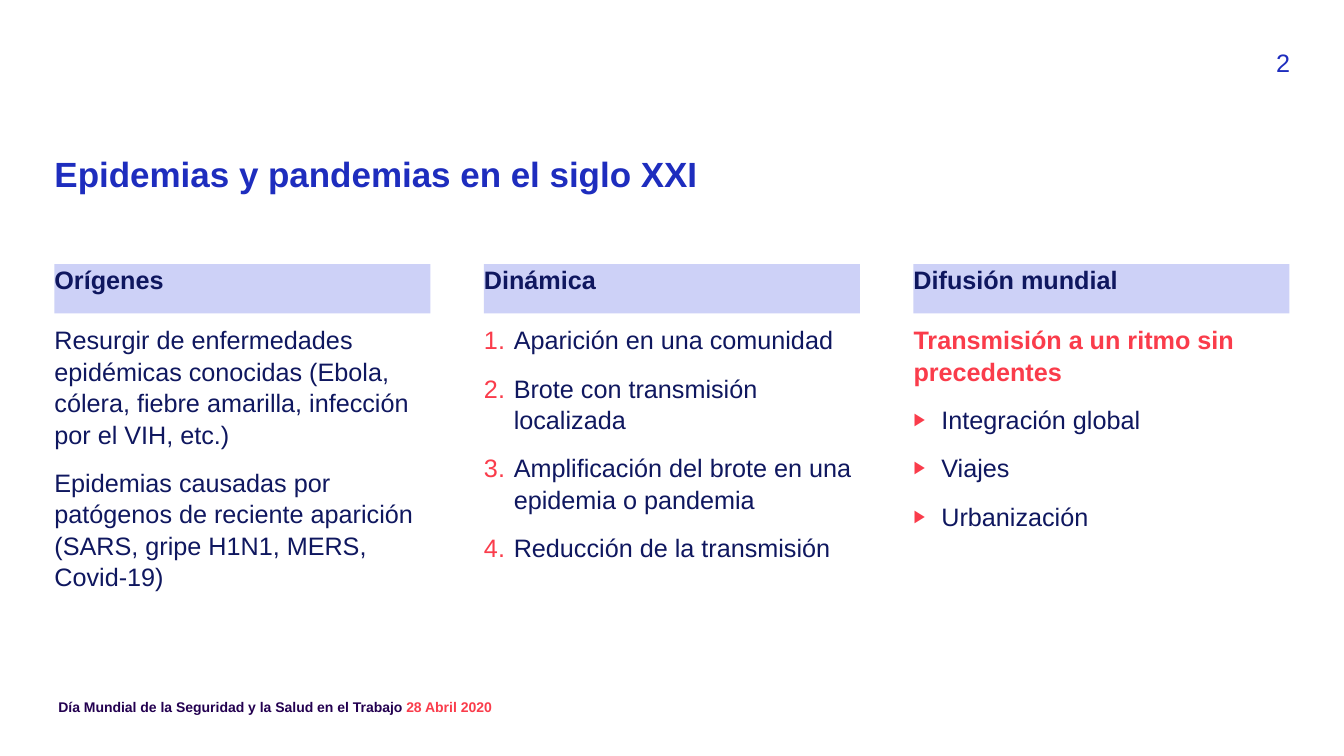
from dataclasses import dataclass
from typing import Optional

from lxml.etree import SubElement
from pptx import Presentation
from pptx.dml.color import RGBColor
from pptx.enum.shapes import MSO_SHAPE as Preset
from pptx.enum.text import MSO_ANCHOR as Anchor, MSO_AUTO_SIZE as AutoSize, PP_ALIGN as Align
from pptx.oxml.ns import qn
from pptx.util import Pt

FONT = "Arial"
BLUE = RGBColor(0x1E, 0x2D, 0xBE)
NAVY = RGBColor(0x0F, 0x17, 0x5F)
RED = RGBColor(0xFA, 0x3C, 0x4B)
LAVENDER = RGBColor(0xCD, 0xD1, 0xF7)
VIOLET = RGBColor(0x23, 0x00, 0x50)

LEFT, COLUMN_WIDTH, COLUMN_PITCH = 38.9, 268.6, 306.8
HEADER_TOP, HEADER_HEIGHT = 188.6, 35.3
BODY_TOP, BODY_HEIGHT = 231.1, 231.1


@dataclass(frozen=True)
class Bullet:
    tag: str
    attribute: str
    value: str
    indent: float
    level: int = 0
    percent: int = 100


NUMBER = Bullet("a:buAutoNum", "type", "arabicPeriod", 21.3)
TRIANGLE = Bullet("a:buChar", "char", "▶", 19.9, level=1, percent=70)


@dataclass(frozen=True)
class Column:
    heading: str
    placeholder: int
    items: tuple[str, ...]
    bullet: Optional[Bullet] = None
    lead: str = ""


COLUMNS = (
    Column("Orígenes", 1, (
        "Resurgir de enfermedades epidémicas conocidas (Ebola, cólera, fiebre amarilla, "
        "infección por el VIH, etc.)",
        "Epidemias causadas por patógenos de reciente aparición (SARS, gripe H1N1, MERS, Covid-19)",
    )),
    Column("Dinámica", 2, (
        "Aparición en una comunidad",
        "Brote con transmisión localizada",
        "Amplificación del brote en una epidemia o pandemia",
        "Reducción de la transmisión",
    ), NUMBER),
    Column("Difusión mundial", 4, ("Integración global", "Viajes", "Urbanización"), TRIANGLE,
           "Transmisión a un ritmo sin precedentes"),
)


def place(shape, left: float, top: float, width: float, height: float) -> None:
    shape.left, shape.top, shape.width, shape.height = map(Pt, (left, top, width, height))


def prepare_frame(shape, margin_left: float = 0):
    frame = shape.text_frame
    frame.word_wrap = True
    frame.auto_size = AutoSize.NONE
    frame.vertical_anchor = Anchor.TOP
    frame.margin_left = Pt(margin_left)
    frame.margin_top = frame.margin_right = frame.margin_bottom = Pt(0)
    return frame


def set_bullet(paragraph, bullet: Optional[Bullet]) -> None:
    """Give the paragraph a red marker and hanging indent, or no marker at all."""
    properties = paragraph._p.get_or_add_pPr()
    indent = Pt(bullet.indent) if bullet else 0
    properties.set("marL", str(indent))
    properties.set("indent", str(-indent))
    if bullet is None:
        SubElement(properties, qn("a:buNone"))
        return
    paragraph.level = bullet.level
    color = SubElement(properties, qn("a:buClr"))
    SubElement(color, qn("a:srgbClr")).set("val", str(RED))
    SubElement(properties, qn("a:buSzPct")).set("val", str(bullet.percent * 1000))
    SubElement(properties, qn("a:buFont")).set("typeface", FONT)
    SubElement(properties, qn(bullet.tag)).set(bullet.attribute, bullet.value)


def add_run(paragraph, text: str, *, size: float = 18, color: RGBColor = NAVY,
            bold: bool = False) -> None:
    run = paragraph.add_run()
    run.text = text
    run.font.name = FONT
    run.font.size = Pt(size)
    run.font.bold = bold
    run.font.color.rgb = color


def write(frame, text: str, *, first: bool = True, bullet: Optional[Bullet] = None,
          align: Align = Align.LEFT, before: float = 6, after: float = 0,
          line_spacing: float = 1.0, **font):
    """Fill the first paragraph of the frame, or append another one."""
    paragraph = frame.paragraphs[0] if first else frame.add_paragraph()
    set_bullet(paragraph, bullet)
    paragraph.alignment = align
    paragraph.line_spacing = line_spacing
    paragraph.space_before = Pt(0 if first else before)
    paragraph.space_after = Pt(after)
    add_run(paragraph, text, **font)
    return paragraph


def add_text_box(slide, left: float, top: float, width: float, height: float,
                 margin_left: float = 0):
    box = slide.shapes.add_textbox(*map(Pt, (left, top, width, height)))
    return prepare_frame(box, margin_left)


def add_column(slide, column: Column, left: float) -> None:
    header = slide.shapes.add_shape(
        Preset.RECTANGLE, *map(Pt, (left, HEADER_TOP, COLUMN_WIDTH, HEADER_HEIGHT)))
    header.shadow.inherit = False
    header.fill.solid()
    header.fill.fore_color.rgb = LAVENDER
    header.line.fill.background()
    write(prepare_frame(header), column.heading, bold=True)

    body = slide.placeholders[column.placeholder]
    place(body, left, BODY_TOP, COLUMN_WIDTH, BODY_HEIGHT)
    frame = prepare_frame(body)
    if column.lead:
        write(frame, column.lead, after=6, line_spacing=1.04, color=RED, bold=True)
    for index, item in enumerate(column.items):
        write(frame, item, first=index == 0 and not column.lead, bullet=column.bullet,
              after=6, line_spacing=1.04)


def main() -> None:
    presentation = Presentation()
    presentation.slide_width, presentation.slide_height = Pt(960), Pt(540)
    slide = presentation.slides.add_slide(presentation.slide_layouts.get_by_name("Comparison"))

    title = slide.shapes.title
    place(title, LEFT, 112.3, 882.7, 56.9)
    write(prepare_frame(title), "Epidemias y pandemias en el siglo XXI",
          line_spacing=0.9, size=25, color=BLUE, bold=True)

    for index, column in enumerate(COLUMNS):
        add_column(slide, column, LEFT + index * COLUMN_PITCH)
    unused = slide.placeholders[3].element
    unused.getparent().remove(unused)

    page_number = add_text_box(slide, 879.1, 33.8, 42.5, 22.3)
    write(page_number, "2", align=Align.RIGHT, color=BLUE)

    footer = add_text_box(slide, LEFT, 499, 441.4, 14.4, margin_left=2.8)
    paragraph = write(footer, "Día Mundial de la Seguridad y la Salud en el Trabajo ",
                      size=10, color=VIOLET, bold=True)
    add_run(paragraph, "28 Abril 2020", size=10, color=RED, bold=True)

    presentation.save("out.pptx")


if __name__ == "__main__":
    main()
